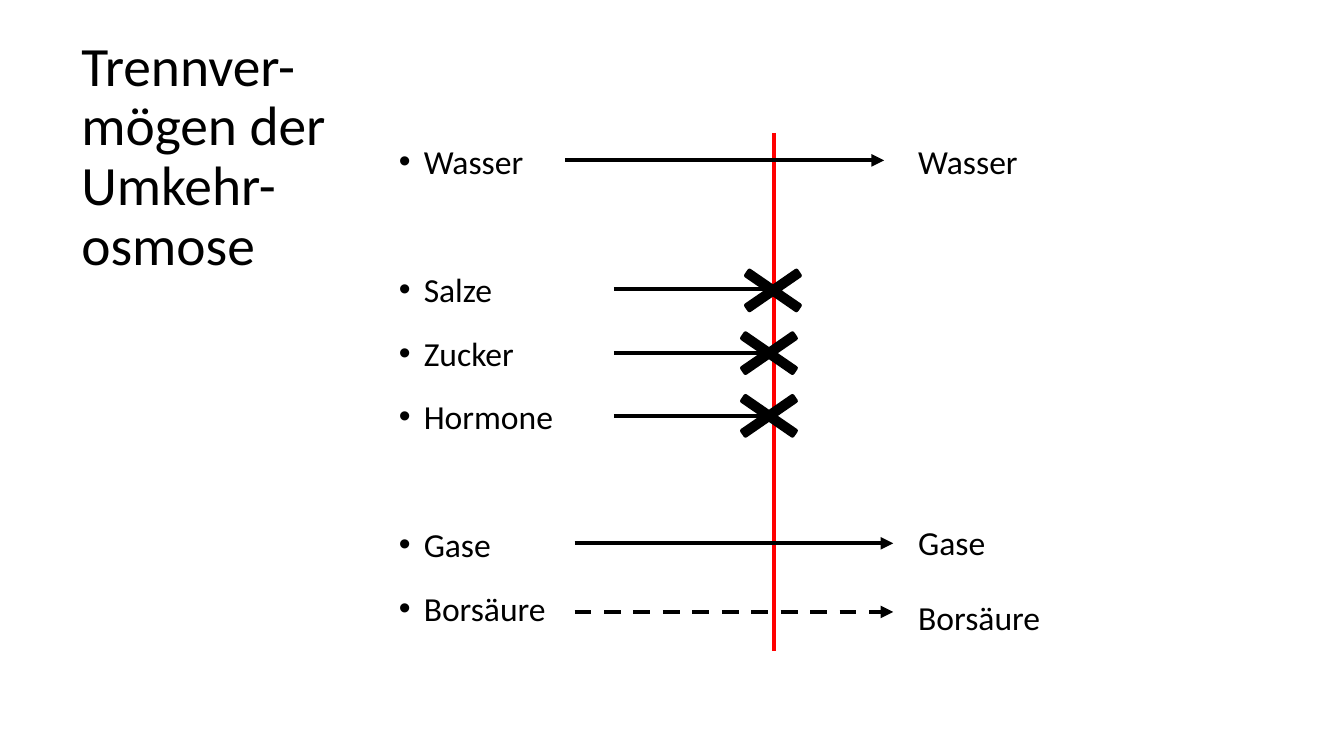
"""Build the slide on the separating power of reverse osmosis."""
import dataclasses

import lxml.etree
import pptx
import pptx.dml.color
import pptx.enum.dml
import pptx.enum.shapes
import pptx.enum.text
import pptx.oxml.ns
import pptx.util

Cm = pptx.util.Cm
Pt = pptx.util.Pt
qn = pptx.oxml.ns.qn


@dataclasses.dataclass(frozen=True)
class Theme:
    font: str = "Calibri"
    ink: str = "000000"
    membrane: str = "FF0000"
    title_size: float = 39.6
    body_size: float = 24
    stroke: float = 3


def add_text(para, text, *, theme, size, spacing, before=0, bullet=False):
    para.line_spacing = spacing
    para.space_before = Pt(before)
    span = para.add_run()
    span.text = text
    span.font.name = theme.font
    span.font.size = Pt(size)
    span.font.color.rgb = pptx.dml.color.RGBColor.from_string(theme.ink)
    if bullet:
        props = para._p.get_or_add_pPr()
        props.set("marL", str(Cm(0.63)))
        props.set("indent", str(-Cm(0.63)))
        lxml.etree.SubElement(props, qn("a:buFont"), typeface="Arial")
        lxml.etree.SubElement(props, qn("a:buChar"), char="•")


class Painter:
    def __init__(self, page, theme):
        self.page = page
        self.theme = theme
        self.diagram = None

    def start_diagram(self):
        self.diagram = self.page.shapes.add_group_shape()

    def text_box(self, left, top, width, height, middle=False):
        box = self.page.shapes.add_textbox(Cm(left), Cm(top), Cm(width), Cm(height))
        anchor = pptx.enum.text.MSO_ANCHOR
        box.text_frame.word_wrap = True
        box.text_frame.vertical_anchor = anchor.MIDDLE if middle else anchor.TOP
        return box.text_frame

    def title(self, text, *place):
        frame = self.text_box(*place, middle=True)
        add_text(frame.paragraphs[0], text, theme=self.theme,
                 size=self.theme.title_size, spacing=0.9)

    def word_list(self, words, *place, spacing, bullet=False):
        frame = self.text_box(*place)
        for index, (word, before) in enumerate(words):
            para = frame.add_paragraph() if index else frame.paragraphs[0]
            add_text(para, word, theme=self.theme, size=self.theme.body_size,
                     spacing=spacing if index else 1.5, before=before, bullet=bullet)

    def outline(self, line, color):
        line.width = Pt(self.theme.stroke)
        line.color.rgb = pptx.dml.color.RGBColor.from_string(color)

    def line(self, x1, y1, x2, y2, color=None, arrow=False, dashed=False):
        stroke = self.diagram.shapes.add_connector(
            pptx.enum.shapes.MSO_CONNECTOR.STRAIGHT, Cm(x1), Cm(y1), Cm(x2), Cm(y2))
        self.outline(stroke.line, color or self.theme.ink)
        if dashed:
            stroke.line.dash_style = pptx.enum.dml.MSO_LINE.DASH
        if arrow:
            lxml.etree.SubElement(stroke.line._ln, qn("a:tailEnd"), type="triangle")
        lxml.etree.SubElement(stroke._element.spPr, qn("a:effectLst"))

    def cross(self, left, top):
        cross = self.diagram.shapes.add_shape(
            pptx.enum.shapes.MSO_SHAPE.MATH_MULTIPLY,
            Cm(left), Cm(top), Cm(2.44), Cm(1.68))
        cross.adjustments[0] = 0.089
        cross.shadow.inherit = False
        cross.fill.solid()
        cross.fill.fore_color.rgb = pptx.dml.color.RGBColor.from_string(self.theme.ink)
        self.outline(cross.line, self.theme.ink)


def main():
    deck = pptx.Presentation()
    deck.slide_width, deck.slide_height = Cm(33.87), Cm(19.05)
    theme = Theme()
    painter = Painter(deck.slides.add_slide(deck.slide_layouts[6]), theme)

    painter.title("Trennver-mögen der Umkehr-osmose", 1.8, 2.39, 7.24, 3.18)
    near, group_gap = 9.4, 55.4
    feed = [("Wasser", 0), ("Salze", group_gap), ("Zucker", near),
            ("Hormone", near), ("Gase", group_gap), ("Borsäure", near)]
    painter.word_list(feed, 9.8, 2.92, 14.81, 12.55, spacing=1.25, bullet=True)
    passed = [("Wasser", 0), ("Gase", 229), ("Borsäure", 10)]
    painter.word_list(passed, 22.89, 2.92, 9.68, 13.06, spacing=1.5)

    painter.start_diagram()
    painter.line(19.51, 3.35, 19.51, 16.41, color=theme.membrane)
    for start, level, dashed in [(14.25, 4.04, False), (14.48, 13.69, False),
                                 (14.48, 15.42, True)]:
        painter.line(start, level, start + 8.03, level, arrow=True, dashed=dashed)
    for row, left in enumerate([18.26, 18.16, 18.16]):
        painter.cross(left, 6.48 + 1.58 * row)
        level = 7.29 + 1.6 * row
        painter.line(15.47, level, 19.48, level)

    deck.save("out.pptx")


if __name__ == "__main__":
    main()
